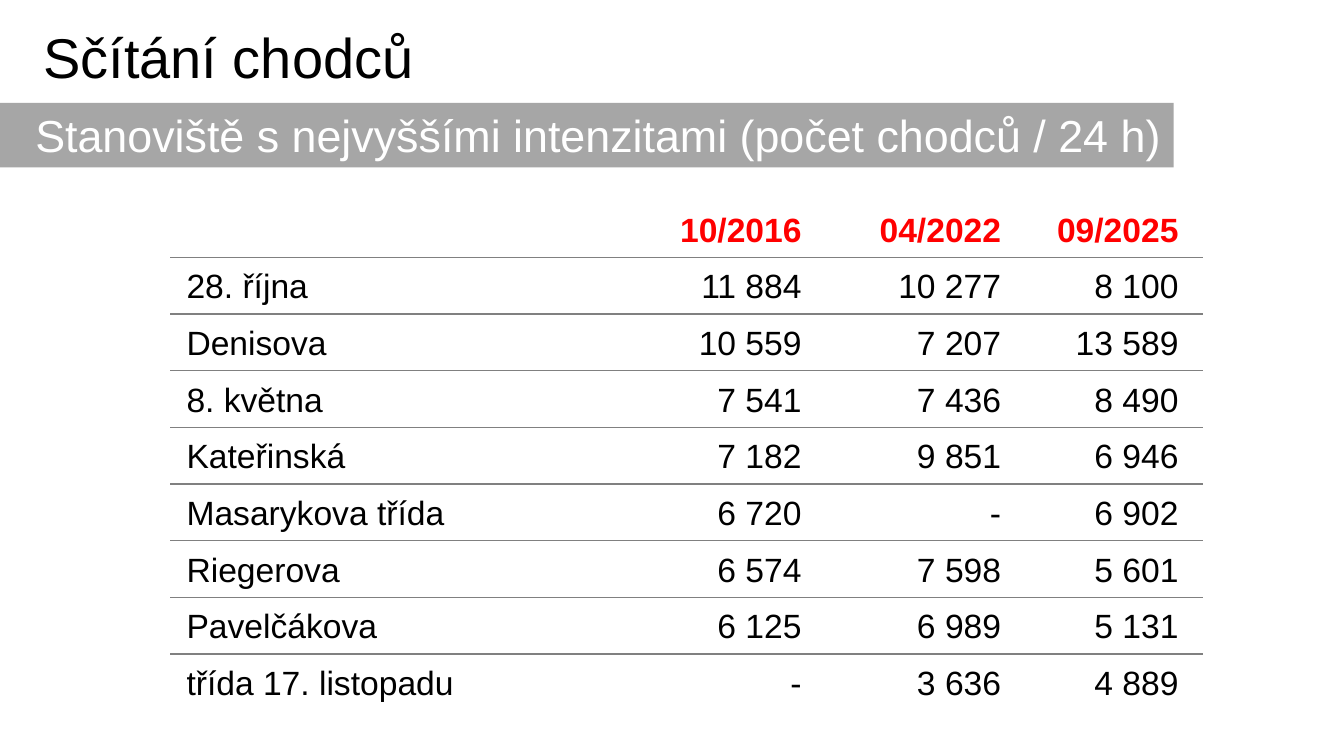
from pptx import Presentation
from pptx.util import Inches, Pt
from pptx.dml.color import RGBColor
from pptx.enum.shapes import MSO_SHAPE as Shape
from pptx.enum.text import PP_ALIGN as Align, MSO_ANCHOR as Anchor
from pptx.oxml import parse_xml
from pptx.oxml.ns import nsdecls

deck = Presentation()
deck.slide_width, deck.slide_height = Inches(13.33), Inches(7.5)
slide = deck.slides.add_slide(deck.slide_layouts[6])


def place(left, top, width, height):
    wide, tall = deck.slide_width / 100, deck.slide_height / 100
    return int(left * wide), int(top * tall), int(width * wide), int(height * tall)


def style(par, size, color, bold=False):
    for run in par.runs:
        font = run.font
        font.name, font.size, font.bold = "Arial", Pt(size), bold
        font.color.rgb = RGBColor.from_string(color)


head = [("", "10/2016", "04/2022", "09/2025")]
body = [
    ("28. října", "11 884", "10 277", "8 100"),
    ("Denisova", "10 559", "7 207", "13 589"),
    ("8. května", "7 541", "7 436", "8 490"),
    ("Kateřinská", "7 182", "9 851", "6 946"),
    ("Masarykova třída", "6 720", "-", "6 902"),
    ("Riegerova", "6 574", "7 598", "5 601"),
    ("Pavelčákova", "6 125", "6 989", "5 131"),
    ("třída 17. listopadu", "-", "3 636", "4 889"),
]
rows = head + body
shares = [33.91, 14.85, 14.85, 13.2]
area = place(12.68, 26.53, sum(shares), 7.5 * len(rows))
grid = slide.shapes.add_table(len(rows), len(shares), *area).table
grid.first_row = grid.horz_banding = False
for col, share in zip(grid.columns, shares):
    col.width = place(0, 0, share, 0)[2]

for r, row in enumerate(rows):
    grid.rows[r].height = place(0, 0, 0, 7.5)[3]
    for c, word in enumerate(row):
        cell = grid.cell(r, c)
        cell.fill.background()
        cell.vertical_anchor = Anchor.BOTTOM
        cell.margin_left = Inches(0.07 if c else 0.16)
        cell.margin_right = Inches(0.24 if c else 0.1)
        cell.margin_top, cell.margin_bottom = 0, Inches(0.08)
        cell.text_frame.text = word
        par = cell.text_frame.paragraphs[0]
        par.alignment = Align.RIGHT if c else Align.LEFT
        par.line_spacing, par.space_after = Pt(14), Pt(6)
        style(par, 24, "000000" if r else "FF0000", r == 0)
        sides = {"L": False, "R": False, "T": r > 0, "B": r < len(rows) - 1}
        for spot, (side, drawn) in enumerate(sides.items()):
            paint = '<a:solidFill><a:srgbClr val="808080"/></a:solidFill>' if drawn else "<a:noFill/>"
            edge = f'<a:ln{side} {nsdecls("a")} w="{Pt(1)}">{paint}</a:ln{side}>'
            cell._tc.get_or_add_tcPr().insert(spot, parse_xml(edge))

title = slide.shapes.add_textbox(*place(2.48, 2.27, 42.16, 10.27))
title.text_frame.word_wrap = True
title.text_frame.text = "Sčítání chodců"
style(title.text_frame.paragraphs[0], 40, "000000")

band = slide.shapes.add_shape(Shape.RECTANGLE, *place(0, 13.6, 87.32, 8.53))
band.shadow.inherit = False
band.fill.solid()
band.fill.fore_color.rgb = RGBColor.from_string("A6A6A6")
band.line.fill.background()
text = band.text_frame
text.word_wrap = True
text.margin_left, text.margin_right = Inches(0.35), Inches(0.05)
text.vertical_anchor = Anchor.TOP
text.text = "Stanoviště s nejvyššími intenzitami (počet chodců / 24 h)"
text.paragraphs[0].alignment = Align.LEFT
style(text.paragraphs[0], 32, "FFFFFF")

deck.save("out.pptx")
